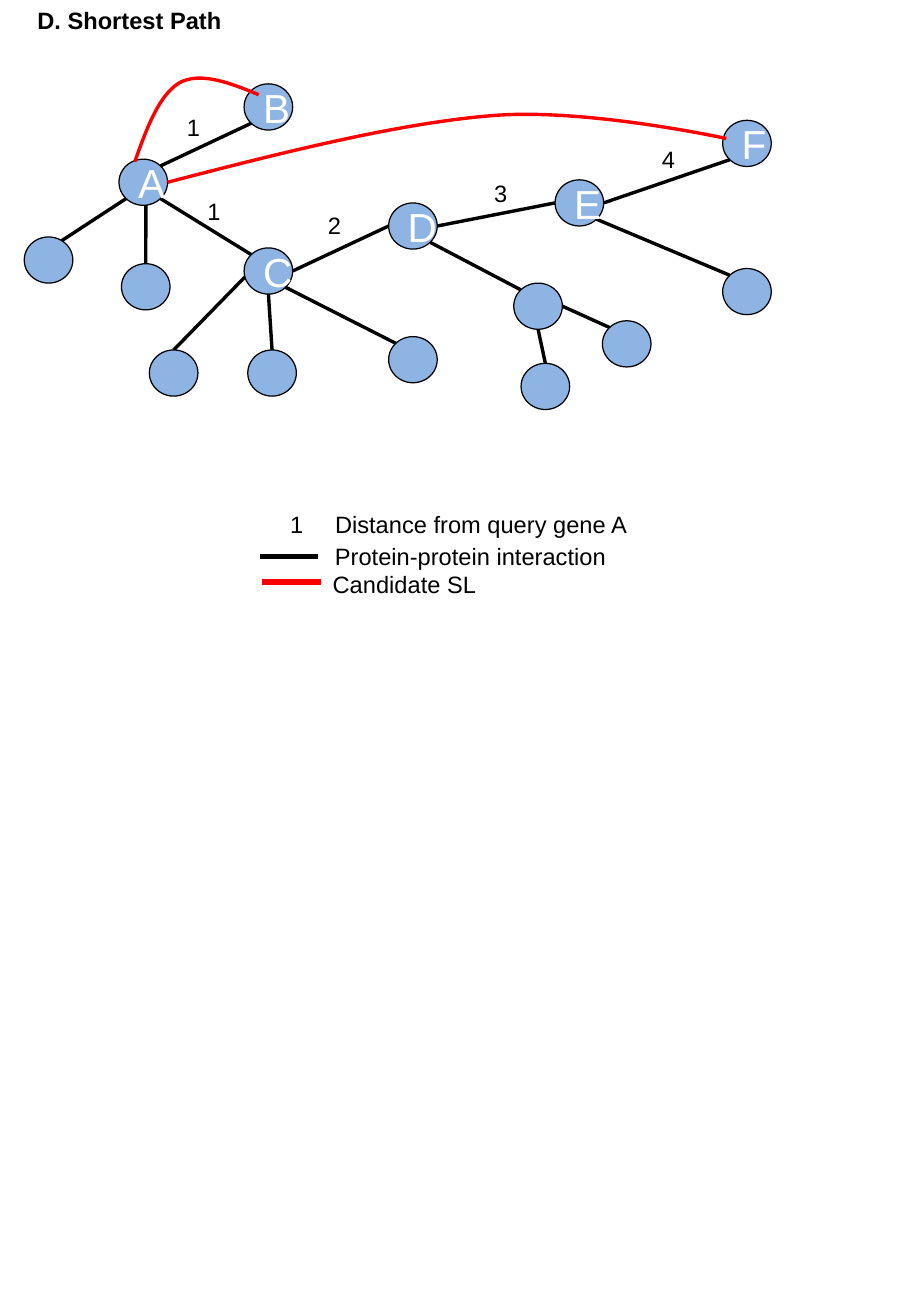
from math import cos, radians, sin

from lxml import etree
from pptx import Presentation
from pptx.dml.color import RGBColor
from pptx.enum.shapes import MSO_CONNECTOR, MSO_SHAPE
from pptx.enum.text import MSO_ANCHOR, MSO_AUTO_SIZE, PP_ALIGN
from pptx.oxml.ns import qn
from pptx.util import Inches, Pt

LINE, OVAL = MSO_CONNECTOR.STRAIGHT, MSO_SHAPE.OVAL
MIDDLE, FIT_SHAPE = MSO_ANCHOR.MIDDLE, MSO_AUTO_SIZE.SHAPE_TO_FIT_TEXT
LEFT, CENTER = PP_ALIGN.LEFT, PP_ALIGN.CENTER

# The page is a square grid of 750 columns by 1083 rows
COLUMNS, ROWS = 750, 1083
CELL = Inches(7.5) // COLUMNS
COLORS = {"black": "000000", "white": "FFFFFF", "red": "FF0000", "node": "8EB4E3"}
NODE_WIDTH, NODE_HEIGHT, TEXT_HEIGHT = 40, 38, 34

# Genes: name -> column and row of the centre; capitals are shown as labels
GENES = {
    "A": (118, 150), "B": (221, 88), "C": (221, 223), "D": (340, 186),
    "E": (477, 167), "F": (615, 118),
    "a1": (40, 214), "a2": (120, 236),
    "c1": (143, 307), "c2": (224, 307), "c3": (340, 296),
    "d1": (443, 252), "d2": (449, 318), "d3": (516, 283), "e1": (615, 240),
}

# Interactions: gene and clockwise angle of its rim point, at both ends
INTERACTIONS = [
    ("A", 45, "C", 225), ("B", 135, "A", 315), ("D", 180, "C", 0),
    ("C", 45, "c3", 225), ("E", 180, "D", 0), ("F", 135, "E", 0),
    ("e1", 225, "E", 45), ("d1", 225, "D", 45), ("C", 90, "c2", 270),
    ("A", 84, "a2", 270), ("A", 135, "a1", 303), ("d2", 270, "d1", 90),
    ("d3", 225, "d1", 0), ("C", 165, "c1", 270),
]

# Candidate pairs: a start point, then three points for each Bezier segment
CANDIDATES = [
    [(111, 133), (121, 105), (131, 78), (148, 68), (165, 59), (189, 68), (213, 78)],
    [(138, 150), (234, 125), (330, 101), (407, 95), (484, 89), (598, 114), (598, 114)],
]

# Distances: text, column and row of the box
DISTANCES = [("1", 144, 88), ("1", 161, 157), ("2", 260, 169),
             ("3", 397, 142), ("4", 535, 114)]

# Legend: text, column, row and width of the box
LEGEND_TEXTS = [
    ("1", 229, 415, 31),
    ("Distance from query gene A", 266, 415, 262),
    ("Protein-protein interaction", 266, 441, 244),
    ("Candidate SL", 264, 464, 139),
]
LEGEND_LINES = [("black", 214, 458), ("red", 216, 479)]
LEGEND_LINE_LENGTH = 48


def grid(*cells):
    return [round(cell * CELL) for cell in cells]


def color(name):
    return RGBColor.from_string(COLORS[name])


def write(frame, text, size=14, ink="black", bold=False, align=LEFT):
    para = frame.paragraphs[0]
    para.alignment = align
    span = para.add_run()
    span.text = text
    span.font.name = "Arial"
    span.font.size = Pt(size)
    span.font.bold = bold
    span.font.color.rgb = color(ink)


def add_text(page, text, column, row, width=31, **text_format):
    box = page.shapes.add_textbox(*grid(column, row, width, TEXT_HEIGHT))
    box.text_frame.word_wrap = False
    box.text_frame.auto_size = FIT_SHAPE
    write(box.text_frame, text, **text_format)


def add_line(page, start, end, ink="black", weight=2):
    line = page.shapes.add_connector(LINE, *grid(*start, *end))
    line.line.color.rgb = color(ink)
    line.line.width = Pt(weight)
    etree.SubElement(line._element.spPr, qn("a:effectLst"))


def add_gene(page, name):
    column, row = GENES[name]
    node = page.shapes.add_shape(OVAL, *grid(
        column - NODE_WIDTH / 2, row - NODE_HEIGHT / 2, NODE_WIDTH, NODE_HEIGHT))
    node.shadow.inherit = False
    node.fill.solid()
    node.fill.fore_color.rgb = color("node")
    node.line.color.rgb = color("black")
    node.line.width = Pt(0.75)
    if name.isupper():
        node.text_frame.vertical_anchor = MIDDLE
        write(node.text_frame, name, size=24, ink="white", align=CENTER)


def rim_point(name, angle):
    column, row = GENES[name]
    turn = radians(angle)
    return column + NODE_WIDTH / 2 * cos(turn), row + NODE_HEIGHT / 2 * sin(turn)


def add_curve(page, points):
    builder = page.shapes.build_freeform(*points[0], scale=CELL)
    builder.add_line_segments(points[1:], close=False)
    curve = builder.convert_to_shape()
    curve.shadow.inherit = False
    curve.fill.background()
    curve.line.color.rgb = color("red")
    curve.line.width = Pt(2)
    # Join every three straight steps into one Bezier segment
    steps = list(curve._element.iter(qn("a:lnTo")))
    for first, second, third in zip(steps[::3], steps[1::3], steps[2::3]):
        first.addprevious(bezier := etree.Element(qn("a:cubicBezTo")))
        for step in (first, second, third):
            bezier.append(step[0])
            step.getparent().remove(step)


def main():
    deck = Presentation()
    deck.slide_width, deck.slide_height = grid(COLUMNS, ROWS)
    page = deck.slides.add_slide(deck.slide_layouts[6])

    add_text(page, "D. Shortest Path", 21, 0, 173, bold=True)

    # Network
    for start, start_angle, end, end_angle in INTERACTIONS:
        add_line(page, rim_point(start, start_angle), rim_point(end, end_angle))
    for name in GENES:
        add_gene(page, name)
    for points in CANDIDATES:
        add_curve(page, points)
    for distance in DISTANCES:
        add_text(page, *distance)

    # Legend
    for ink, column, row in LEGEND_LINES:
        add_line(page, (column, row), (column + LEGEND_LINE_LENGTH, row), ink, 3)
    for entry in LEGEND_TEXTS:
        add_text(page, *entry)

    deck.save("out.pptx")


if __name__ == "__main__":
    main()
